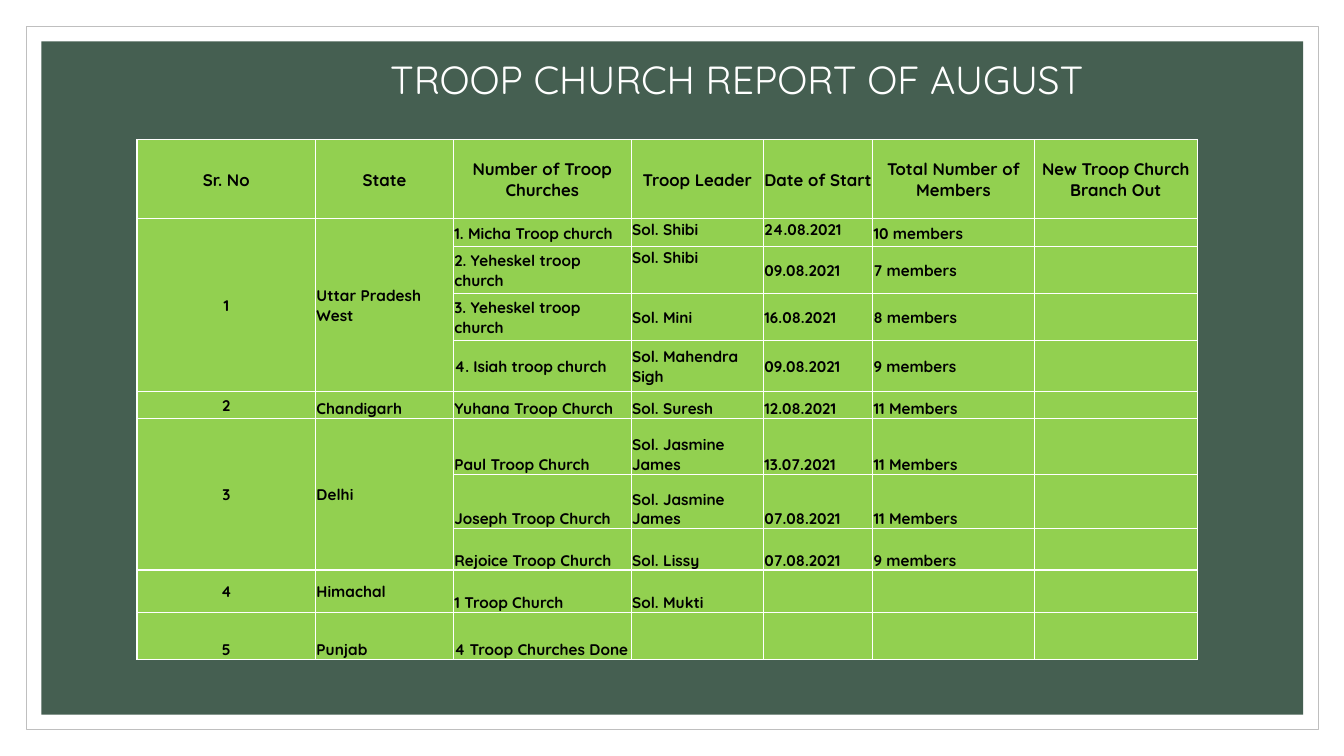
import itertools

import pptx
import pptx.dml.color
import pptx.enum.shapes
import pptx.enum.text
import pptx.oxml.ns
import pptx.util
from lxml import etree

Pt = pptx.util.Pt
ALIGN = pptx.enum.text.PP_ALIGN
ANCHOR = pptx.enum.text.MSO_ANCHOR
ANCHORS = {"t": ANCHOR.TOP, "m": ANCHOR.MIDDLE, "b": ANCHOR.BOTTOM}

COLORS = {
    "white": "FFFFFF",
    "frame": "BFBFBF",
    "panel": "455F51",
    "cell": "92D050",
    "text": "000000",
}
FONT = "Quicksand"

COLUMN_WIDTHS = [127.5, 98.5, 127, 94.5, 78, 115.5, 116.5]
# Row height, vertical anchor of each column, texts
REPORT_ROWS = [
    (56.5, "mmmmmmm", ["Sr. No", "State", "Number of Troop Churches", "Troop Leader",
                       "Date of Start", "Total Number of Members",
                       "New Troop Church Branch Out"]),
    (20, "mmmttmm", ["1", "Uttar Pradesh West", "1. Micha Troop church", "Sol. Shibi",
                     "24.08.2021", "10 members", ""]),
    (33.5, "mmmtmmm", ["", "", "2. Yeheskel troop church", "Sol. Shibi",
                       "09.08.2021", "7 members", ""]),
    (33.5, "mmmmmmm", ["", "", "3. Yeheskel troop church", "Sol. Mini",
                       "16.08.2021", "8 members", ""]),
    (36.5, "mmmmmmm", ["", "", "4. Isiah troop church", "Sol. Mahendra Sigh",
                       "09.08.2021", "9 members", ""]),
    (19.5, "mbbbbbb", ["2", "Chandigarh", "Yuhana Troop Church", "Sol. Suresh",
                       "12.08.2021", "11 Members", ""]),
    (39.5, "mmbbbbb", ["3", "Delhi", "Paul Troop Church", "Sol. Jasmine James",
                       "13.07.2021", "11 Members", ""]),
    (39, "mmbbbbb", ["", "", "Joseph Troop Church", "Sol. Jasmine James",
                     "07.08.2021", "11 Members", ""]),
    (29.5, "mmbbbbb", ["", "", "Rejoice Troop Church", "Sol. Lissy",
                       "07.08.2021", "9 members", ""]),
    (30.5, "mmbbbbb", ["4", "Himachal", "1 Troop Church", "Sol. Mukti", "", "", ""]),
    (33.5, "bbbbbbb", ["5", "Punjab", "4 Troop Churches Done", "", "", "", ""]),
]
STATE_SPANS = [(1, 4), (6, 8)]  # first and last row of each merged state


def rgb(name):
    return pptx.dml.color.RGBColor.from_string(COLORS[name])


def add_text(paragraph, text, size, color, bold=False):
    run = paragraph.add_run()
    run.text = text
    run.font.name = FONT
    run.font.size = Pt(size)
    run.font.bold = bold
    run.font.color.rgb = rgb(color)


def add_panel(slide, left, top, width, height, fill, line=None):
    panel = slide.shapes.add_shape(
        pptx.enum.shapes.MSO_SHAPE.RECTANGLE, Pt(left), Pt(top), Pt(width), Pt(height))
    panel.shadow.inherit = False
    panel.fill.solid()
    panel.fill.fore_color.rgb = rgb(fill)
    if line:
        panel.line.color.rgb = rgb(line)
        panel.line.width = Pt(0.5)
    else:
        panel.line.fill.background()


def add_background(slide, left, top, width, height, gap):
    """White framed sheet with a green panel inset by gap."""
    add_panel(slide, left, top, width, height, "white", "frame")
    add_panel(slide, left + gap, top + gap, width - 2 * gap, height - 2 * gap, "panel")


def add_title(slide, left, top, width, height):
    title = slide.shapes.add_textbox(Pt(left), Pt(top), Pt(width), Pt(height)).text_frame
    title.word_wrap = True
    title.vertical_anchor = ANCHOR.MIDDLE
    heading = title.paragraphs[0]
    heading.alignment = ALIGN.CENTER
    heading.line_spacing = 0.9
    add_text(heading, "TROOP CHURCH REPORT OF AUGUST", 28, "white")


def add_borders(cell):
    properties = cell._tc.get_or_add_tcPr()
    qn = pptx.oxml.ns.qn
    for side in ("a:lnL", "a:lnR", "a:lnT", "a:lnB"):
        border = etree.SubElement(properties, qn(side), w=str(Pt(1)))
        fill = etree.SubElement(border, qn("a:solidFill"))
        etree.SubElement(fill, qn("a:srgbClr"), val=COLORS["white"])


def fill_cell(cell, text, size, anchor, alignment):
    add_borders(cell)
    cell.fill.solid()
    cell.fill.fore_color.rgb = rgb("cell")
    cell.margin_left = cell.margin_right = cell.margin_top = Pt(0.7)
    cell.margin_bottom = 0
    cell.vertical_anchor = ANCHORS[anchor]
    paragraph = cell.text_frame.paragraphs[0]
    paragraph.alignment = alignment
    if text:
        add_text(paragraph, text, size, "text", bold=True)
    else:
        # Keeps an empty cell from stretching its row
        etree.SubElement(paragraph._p, pptx.oxml.ns.qn("a:endParaRPr"), sz=str(size * 100))


def add_report(slide, left, top):
    width = sum(COLUMN_WIDTHS)
    height = sum(row_height for row_height, _, _ in REPORT_ROWS)
    report = slide.shapes.add_table(
        len(REPORT_ROWS), len(COLUMN_WIDTHS), Pt(left), Pt(top), Pt(width), Pt(height)).table
    report.horz_banding = False
    for column, column_width in zip(report.columns, COLUMN_WIDTHS):
        column.width = Pt(column_width)
    for r, (row_height, anchors, texts) in enumerate(REPORT_ROWS):
        report.rows[r].height = Pt(row_height)
        for c, (anchor, text) in enumerate(zip(anchors, texts)):
            centred = r == 0 or c == 0
            fill_cell(report.cell(r, c), text, 12 if r == 0 else 11, anchor,
                      ALIGN.CENTER if centred else ALIGN.LEFT)
    for (first, last), c in itertools.product(STATE_SPANS, (0, 1)):
        report.cell(first, c).merge(report.cell(last, c))


def main():
    presentation = pptx.Presentation()
    presentation.slide_width = Pt(960)
    presentation.slide_height = Pt(540)
    slide = presentation.slides.add_slide(presentation.slide_layouts[6])
    add_background(slide, 18.7, 18.7, 923, 502.6, 10.8)
    add_title(slide, 212.4, 38.9, 627.8, 39.6)
    add_report(slide, 97.9, 99.8)
    presentation.save("out.pptx")


if __name__ == "__main__":
    main()
